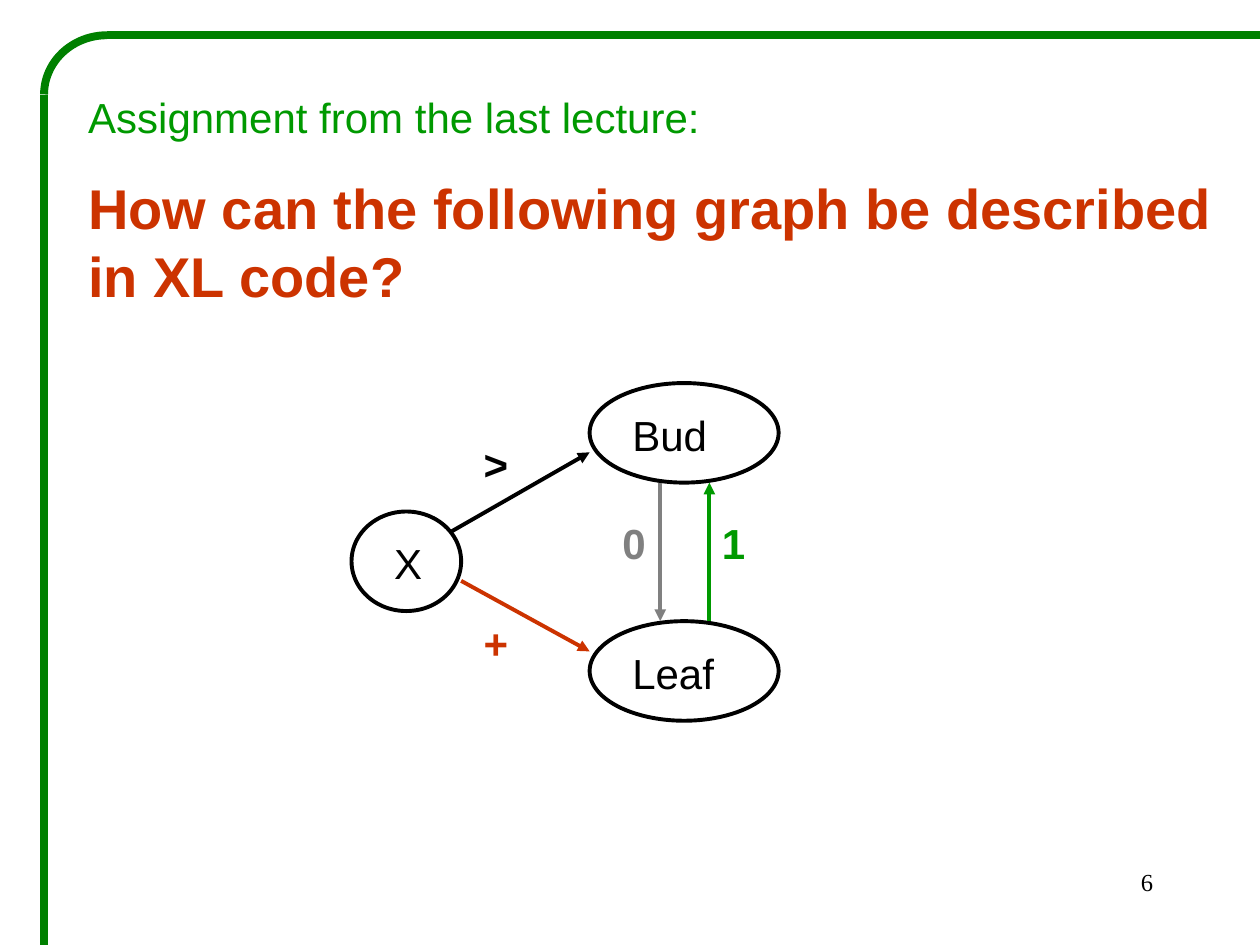
from lxml import etree
from pptx import Presentation
from pptx.dml.color import RGBColor
from pptx.enum.shapes import MSO_CONNECTOR, MSO_SHAPE
from pptx.enum.text import MSO_ANCHOR, MSO_AUTO_SIZE, PP_ALIGN
from pptx.oxml.ns import qn
from pptx.util import Inches, Pt

STRAIGHT = MSO_CONNECTOR.STRAIGHT
LEFT, RIGHT = PP_ALIGN.LEFT, PP_ALIGN.RIGHT

COLORS = {"black": "000000", "green": "009900", "red": "CC3300",
          "gray": "808080", "frame": "008000"}
WIDTH, HEIGHT = 10, 7.5

# text, size, color, bold
HEADING = [
    ("Assignment from the last lecture:", 24, "green", False),
    ("How can the following graph be described in XL code?", 32, "red", True),
]
NODE_HEIGHT, LABEL_HEIGHT = 0.79, 0.5
LABEL_INSET = (0.24, 0.16)
# name, left, top, width, label width
NODES = [
    ("X", 2.79, 4.06, 0.87, 0.55),
    ("Bud", 4.68, 3.04, 1.5, 1.1),
    ("Leaf", 4.68, 4.93, 1.5, 1.1),
]
# symbol, color, start, end, label left, label top, label width
EDGES = [
    ("+", "red", (3.66, 4.61), (4.68, 5.17), 3.74, 4.85, 0.47),
    ("0", "gray", (5.24, 3.83), (5.24, 4.93), 4.84, 4.06, 0.39),
    ("1", "green", (5.63, 4.93), (5.63, 3.83), 5.63, 4.06, 0.39),
    (">", "black", (3.58, 4.22), (4.68, 3.59), 3.74, 3.43, 0.39),
]
FRAME_LEFT, FRAME_TOP = 0.35, 0.28
CORNER_WIDTH, CORNER_HEIGHT = 0.5, 0.47
PAGE_NUMBER = "6"


def rgb(color):
    return RGBColor.from_string(COLORS[color])


def add_span(para, text, size, color, bold=False, font="Arial"):
    span = para.add_run()
    span.text = text
    span.font.name = font
    span.font.size = Pt(size)
    span.font.bold = bold
    span.font.color.rgb = rgb(color)


def add_label(page, place, text, size=24, color="black", bold=False,
              font="Arial", align=LEFT):
    box = page.shapes.add_textbox(*map(Inches, place))
    box.text_frame.word_wrap = True
    para = box.text_frame.paragraphs[0]
    para.alignment = align
    add_span(para, text, size, color, bold, font)


def add_line(page, start, end, color, width, arrow=False):
    line = page.shapes.add_connector(STRAIGHT, *map(Inches, (*start, *end)))
    line.line.color.rgb = rgb(color)
    line.line.width = Pt(width)
    if arrow:
        etree.SubElement(line.line._get_or_add_ln(), qn("a:tailEnd"), type="triangle")
    etree.SubElement(line._element.spPr, qn("a:effectLst"))


def add_outline(page, kind, place, color, width):
    shape = page.shapes.add_shape(kind, *map(Inches, place))
    shape.shadow.inherit = False
    shape.fill.background()
    shape.line.color.rgb = rgb(color)
    shape.line.width = Pt(width)
    return shape


def add_heading(page):
    title = page.shapes.title
    title.left, title.top, title.width, title.height = map(Inches, (0.6, 0.68, 9.21, 1.85))
    frame = title.text_frame
    frame.word_wrap = True
    frame.auto_size = MSO_AUTO_SIZE.NONE
    frame.vertical_anchor = MSO_ANCHOR.TOP
    for index, (text, size, color, bold) in enumerate(HEADING):
        para = frame.add_paragraph() if index else frame.paragraphs[0]
        para.alignment = LEFT
        para.space_before = Pt(18 if index else 0)
        add_span(para, text, size, color, bold)


def add_graph(page):
    for name, left, top, width, label_width in NODES:
        add_outline(page, MSO_SHAPE.OVAL, (left, top, width, NODE_HEIGHT), "black", 2.25)
        inset_x, inset_y = LABEL_INSET
        add_label(page, (left + inset_x, top + inset_y, label_width, LABEL_HEIGHT), name)
    for symbol, color, start, end, left, top, width in EDGES:
        add_line(page, start, end, color, 2.25, arrow=True)
        add_label(page, (left, top, width, LABEL_HEIGHT), symbol, color=color, bold=True)


def add_frame(page):
    corner_right = FRAME_LEFT + CORNER_WIDTH
    corner_bottom = FRAME_TOP + CORNER_HEIGHT
    add_line(page, (WIDTH, FRAME_TOP), (corner_right, FRAME_TOP), "frame", 4.5)
    add_line(page, (FRAME_LEFT, corner_bottom), (FRAME_LEFT, HEIGHT), "frame", 4.5)
    corner = add_outline(page, MSO_SHAPE.ARC,
                         (FRAME_LEFT, FRAME_TOP, 2 * CORNER_WIDTH, 2 * CORNER_HEIGHT),
                         "frame", 4.5)
    # 180 to 270 degrees, in units of 100000 / 60000 degree
    corner.adjustments[0], corner.adjustments[1] = 108, 162


def main():
    deck = Presentation()
    deck.slide_width, deck.slide_height = Inches(WIDTH), Inches(HEIGHT)
    page = deck.slides.add_slide(deck.slide_layouts[5])
    add_heading(page)
    add_graph(page)
    add_frame(page)
    add_label(page, (7.17, 6.83, 2.08, 0.5), PAGE_NUMBER, size=14,
              font="Times New Roman", align=RIGHT)
    deck.save("out.pptx")


if __name__ == "__main__":
    main()
